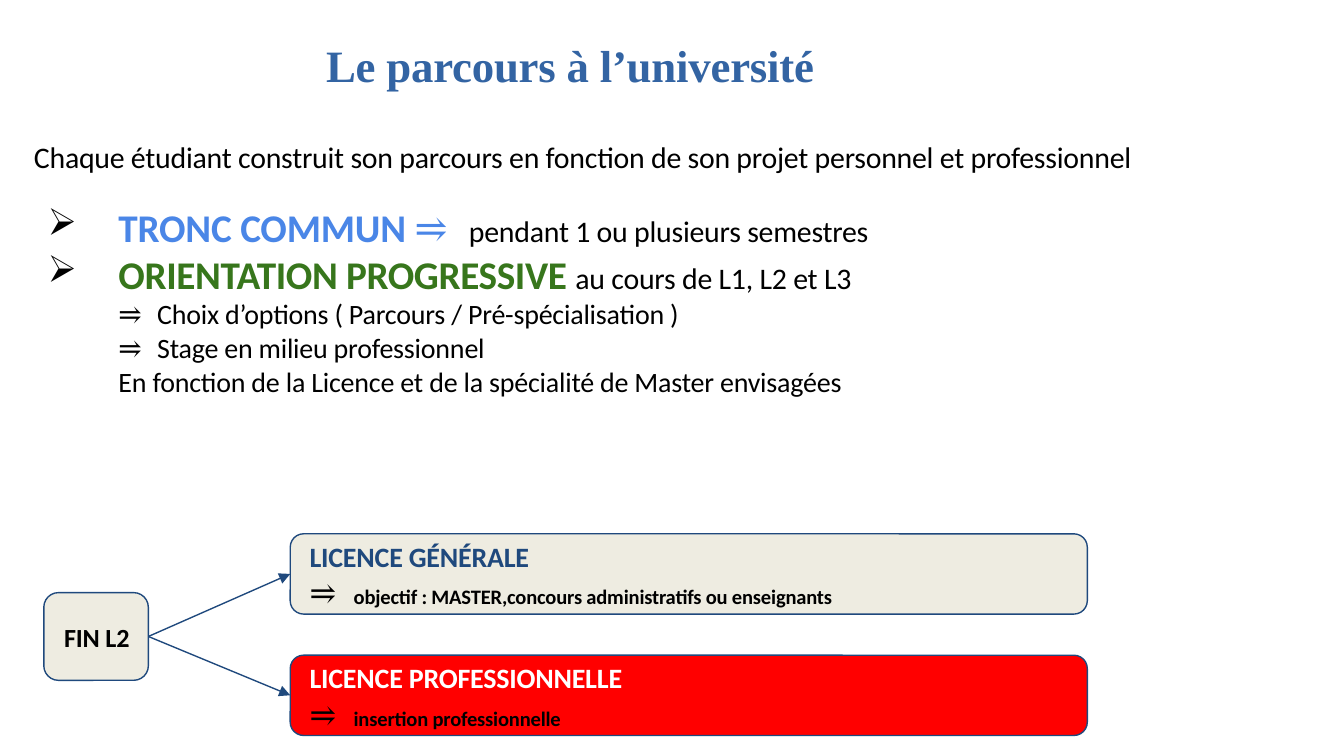
from dataclasses import dataclass

from lxml.etree import SubElement
from pptx import Presentation
from pptx.dml.color import RGBColor
from pptx.enum.shapes import MSO_CONNECTOR, MSO_SHAPE
from pptx.enum.text import MSO_ANCHOR, PP_ALIGN
from pptx.oxml.ns import qn
from pptx.util import Pt


@dataclass(frozen=True)
class Theme:
    title_font: str = "Times New Roman"
    body_font: str = "Calibri"
    symbol_font: str = "Cambria"
    title: str = "3364A3"
    ink: str = "000000"
    white: str = "FFFFFF"
    blue: str = "4A86E7"
    green: str = "37761C"
    navy: str = "1F497D"
    beige: str = "EEECE1"
    red: str = "FF0000"
    title_size: int = 24
    lead_size: int = 21
    arrow_size: int = 17
    body_size: int = 16
    item_size: int = 15
    node_size: int = 14
    note_size: int = 11
    line: float = 0.75


THEME = Theme()

# Styles: font, size, colour, bold, letter spacing in points
STYLES = {
    "title": (THEME.title_font, THEME.title_size, THEME.title, True, -0.1),
    "body": (THEME.body_font, THEME.body_size, THEME.ink, False, -0.1),
    "common": (THEME.body_font, THEME.lead_size, THEME.blue, True, -0.1),
    "common arrow": (THEME.symbol_font, THEME.lead_size, THEME.blue, False, 3.4),
    "orientation": (THEME.body_font, THEME.lead_size, THEME.green, True, -0.2),
    "item": (THEME.body_font, THEME.item_size, THEME.ink, False, -0.1),
    "item arrow": (THEME.symbol_font, THEME.item_size, THEME.ink, False, 2.4),
    "general": (THEME.body_font, THEME.item_size, THEME.navy, True, -0.1),
    "professional": (THEME.body_font, THEME.item_size, THEME.white, True, -0.1),
    "goal arrow": (THEME.symbol_font, THEME.arrow_size, THEME.ink, False, 2.8),
    "goal": (THEME.body_font, THEME.note_size, THEME.ink, True, -0.1),
    "node": (THEME.body_font, THEME.node_size, THEME.ink, True, -0.1),
}

# Content: paragraphs are a layout dict and a list of (text, style)
TITLE = [({"before": 1}, [("Le parcours à l’université", "title")])]
BULLET = {"indent": 46, "hanging": 38, "bullet": "➢"}
ITEM = {"indent": 46}
BODY = [
    ({"before": 3, "align": PP_ALIGN.JUSTIFY},
     [("Chaque étudiant construit son parcours en fonction de son projet "
       "personnel et professionnel", "body")]),
    (BULLET | {"before": 15},
     [("TRONC COMMUN ", "common"), ("⥤ ", "common arrow"),
      ("pendant 1 ou plusieurs semestres", "body")]),
    (BULLET, [("ORIENTATION PROGRESSIVE ", "orientation"),
              ("au cours de L1, L2 et L3", "body")]),
    (ITEM, [("⥤ ", "item arrow"),
            ("Choix d’options ( Parcours / Pré-spécialisation )", "item")]),
    (ITEM, [("⥤ ", "item arrow"), ("Stage en milieu professionnel", "item")]),
    (ITEM, [("En fonction de la Licence et de la spécialité de Master "
             "envisagées", "item")]),
]
START = [({"align": PP_ALIGN.CENTER}, [("FIN L2", "node")])]
DEGREES = [
    ("LICENCE GÉNÉRALE", "general",
     "objectif : MASTER,concours administratifs ou enseignants", THEME.beige),
    ("LICENCE PROFESSIONNELLE", "professional",
     "insertion professionnelle", THEME.red),
]

# Places: left, top, width, height
TITLE_AREA = (174, 18.5, 266, 31)
BODY_AREA = (17.5, 71.5, 618, 143)
START_AREA = (23.5, 317.5, 56, 47)
DEGREE_AREA = (155.5, 286, 427, 43)
DEGREE_STEP = 65


def write(frame, paragraphs, anchor=MSO_ANCHOR.TOP, left=0, top=1):
    """Fill a text frame run by run."""
    frame.word_wrap = True
    frame.vertical_anchor = anchor
    frame.margin_left, frame.margin_top = Pt(left), Pt(top)
    frame.margin_right = frame.margin_bottom = 0
    for number, (layout, spans) in enumerate(paragraphs):
        para = frame.add_paragraph() if number else frame.paragraphs[0]
        para.alignment = layout.get("align", PP_ALIGN.LEFT)
        para.space_before = Pt(layout.get("before", 0))
        if "spacing" in layout:
            para.line_spacing = Pt(layout["spacing"])
        properties = para._p.get_or_add_pPr()
        properties.set("marL", str(Pt(layout.get("indent", 0.75))))
        properties.set("indent", str(-Pt(layout.get("hanging", 0))))
        if "bullet" in layout:
            color = SubElement(properties, qn("a:buClr"))
            SubElement(color, qn("a:srgbClr"), val=THEME.ink)
            SubElement(properties, qn("a:buSzPct"), val="95000")
            SubElement(properties, qn("a:buChar"), char=layout["bullet"])
        for text, style in spans:
            font, size, color, bold, tracking = STYLES[style]
            span = para.add_run()
            span.text = text
            span.font.name, span.font.size, span.font.bold = font, Pt(size), bold
            span.font.color.rgb = RGBColor.from_string(color)
            span._r.get_or_add_rPr().set("spc", str(round(tracking * 100)))


def add_text(page, area, paragraphs, **options):
    box = page.shapes.add_textbox(*map(Pt, area))
    write(box.text_frame, paragraphs, **options)


def add_panel(page, area, fill, paragraphs, **options):
    panel = page.shapes.add_shape(MSO_SHAPE.ROUNDED_RECTANGLE, *map(Pt, area))
    panel.shadow.inherit = False
    panel.fill.solid()
    panel.fill.fore_color.rgb = RGBColor.from_string(fill)
    panel.line.color.rgb = RGBColor.from_string(THEME.navy)
    panel.line.width = Pt(THEME.line)
    write(panel.text_frame, paragraphs, **options)
    return panel


def add_arrow(page, source, target):
    """Join the right side of source to the left side of target."""
    arrow = page.shapes.add_connector(MSO_CONNECTOR.STRAIGHT, 0, 0, 0, 0)
    arrow.begin_connect(source, 3)
    arrow.end_connect(target, 1)
    arrow.line.color.rgb = RGBColor.from_string(THEME.navy)
    arrow.line.width = Pt(THEME.line)
    SubElement(arrow.line._get_or_add_ln(), qn("a:tailEnd"),
               type="triangle", w="med", len="med")
    SubElement(arrow._element.spPr, qn("a:effectLst"))


def main():
    deck = Presentation()
    deck.slide_width, deck.slide_height = Pt(720), Pt(405)
    page = deck.slides.add_slide(deck.slide_layouts[6])

    # Title and explanation
    add_text(page, TITLE_AREA, TITLE, anchor=MSO_ANCHOR.MIDDLE)
    add_text(page, BODY_AREA, BODY, top=3)

    # Branching from the second year to the two degrees
    start = add_panel(page, START_AREA, THEME.beige, START,
                      anchor=MSO_ANCHOR.MIDDLE)
    left, top, width, height = DEGREE_AREA
    for number, (name, style, goal, fill) in enumerate(DEGREES):
        paragraphs = [
            ({"before": 1, "spacing": 17.9}, [(name, style)]),
            ({"spacing": 20.4}, [("⥤ ", "goal arrow"), (goal, "goal")]),
        ]
        area = (left, top + number * DEGREE_STEP, width, height)
        degree = add_panel(page, area, fill, paragraphs, left=7.5)
        add_arrow(page, start, degree)

    deck.save("out.pptx")


if __name__ == "__main__":
    main()
